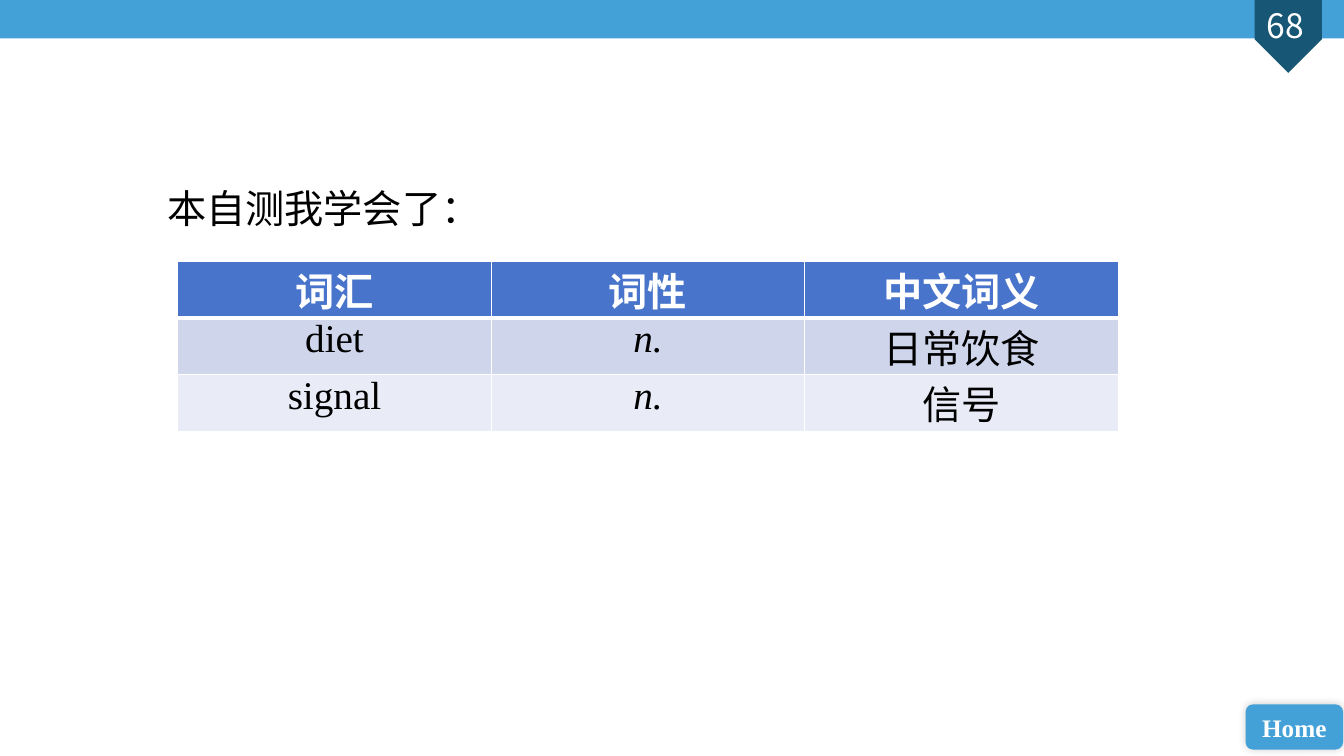
from lxml.etree import SubElement
from pptx import Presentation
from pptx.dml.color import RGBColor
from pptx.enum.shapes import MSO_SHAPE as Shape
from pptx.enum.text import MSO_ANCHOR as Anchor, PP_ALIGN as Align
from pptx.oxml import parse_xml
from pptx.oxml.ns import nsdecls, qn
from pptx.util import Cm, Pt

SANS, SERIF = "Noto Sans CJK SC", "Times New Roman"
BLUE, NAVY, WHITE, BLACK = "43A1D8", "185675", "FFFFFF", "000000"
HEAD, BANDS = "4874CB", ("CFD6EC", "E9EBF6")
WORDS = [
    ("词汇", "词性", "中文词义"),
    ("diet", "n.", "日常饮食"),
    ("signal", "n.", "信号"),
]


def color(code):
    return RGBColor.from_string(code)


def write(frame, text, size, font, code, bold=False, italic=False,
          align=Align.CENTER):
    frame.text = text
    para = frame.paragraphs[0]
    para.alignment = align
    face = para.font
    face.name, face.size = font, Pt(size)
    face.bold, face.italic = bold, italic
    face.color.rgb = color(code)
    east = SubElement(para.runs[0]._r.get_or_add_rPr(), qn("a:ea"))
    east.set("typeface", SANS)


def block(slide, kind, box, fill):
    shape = slide.shapes.add_shape(kind, *map(Cm, box))
    shape.shadow.inherit = False
    shape.fill.solid()
    shape.fill.fore_color.rgb = color(fill)
    shape.line.fill.background()
    return shape


def glow(shape):
    """Give the shape a soft outer shadow."""
    effects = shape._element.spPr.find(qn("a:effectLst"))
    effects.append(parse_xml(
        f'<a:outerShdw {nsdecls("a")} blurRad="{Pt(6)}" dist="0" '
        f'dir="18900000"><a:srgbClr val="{BLACK}"><a:alpha val="20000"/>'
        '</a:srgbClr></a:outerShdw>'))


def edge(cell, side, width):
    """Draw one white border: side is L, R, T or B."""
    line = parse_xml(
        f'<a:ln{side} {nsdecls("a")} w="{Pt(width)}"><a:solidFill>'
        f'<a:srgbClr val="{WHITE}"/></a:solidFill></a:ln{side}>')
    cell._tc.get_or_add_tcPr().append(line)


def heading(slide, text):
    title = slide.shapes.title
    title.left, title.top = Cm(3.96), Cm(4.52)
    title.width, title.height = Cm(9.83), Cm(1.45)
    frame = title.text_frame
    frame.vertical_anchor = Anchor.MIDDLE
    write(frame, text, 28, "Calibri", BLACK, align=Align.LEFT)


def banner(slide, number):
    block(slide, Shape.RECTANGLE, (0, 0, 33.87, 0.97), BLUE)
    flag = block(slide, Shape.PENTAGON, (31.55, 0.07, 1.83, 1.7), NAVY)
    flag.rotation = 90
    label = slide.shapes.add_textbox(Cm(31.14), 0, Cm(2.49), Cm(1.27))
    label.text_frame.word_wrap = True
    write(label.text_frame, number, 24, SANS, WHITE)


def button(slide, text):
    shape = block(slide, Shape.ROUNDED_RECTANGLE,
                  (31.39, 17.75, 2.46, 1.14), BLUE)
    glow(shape)
    frame = shape.text_frame
    frame.word_wrap = False
    frame.vertical_anchor = Anchor.MIDDLE
    write(frame, text, 18, SERIF, WHITE, bold=True)


def grid(slide, rows):
    high, wide = 1.43, 7.9
    count, span = len(rows), len(rows[0])
    table = slide.shapes.add_table(
        count, span, Cm(4.48), Cm(6.58),
        Cm(wide * span), Cm(high * count)).table
    for col in table.columns:
        col.width = Cm(wide)
    for r, row in enumerate(rows):
        table.rows[r].height = Cm(high)
        top = r == 0
        for c, text in enumerate(row):
            cell = table.cell(r, c)
            cell.margin_top = cell.margin_bottom = 0
            write(cell.text_frame, text, 28, SERIF, WHITE if top else BLACK,
                  bold=top, italic=text == "n.")
            for side in "LRTB":
                thick = (top and side == "B") or (r == 1 and side == "T")
                edge(cell, side, 3 if thick else 1)
            cell.fill.solid()
            cell.fill.fore_color.rgb = color(
                HEAD if top else BANDS[(r - 1) % 2])


def main():
    deck = Presentation()
    deck.slide_width, deck.slide_height = Cm(33.87), Cm(19.05)
    slide = deck.slides.add_slide(deck.slide_layouts[5])
    banner(slide, "68")
    button(slide, "Home")
    heading(slide, "本自测我学会了：")
    grid(slide, WORDS)
    deck.save("out.pptx")


if __name__ == "__main__":
    main()
